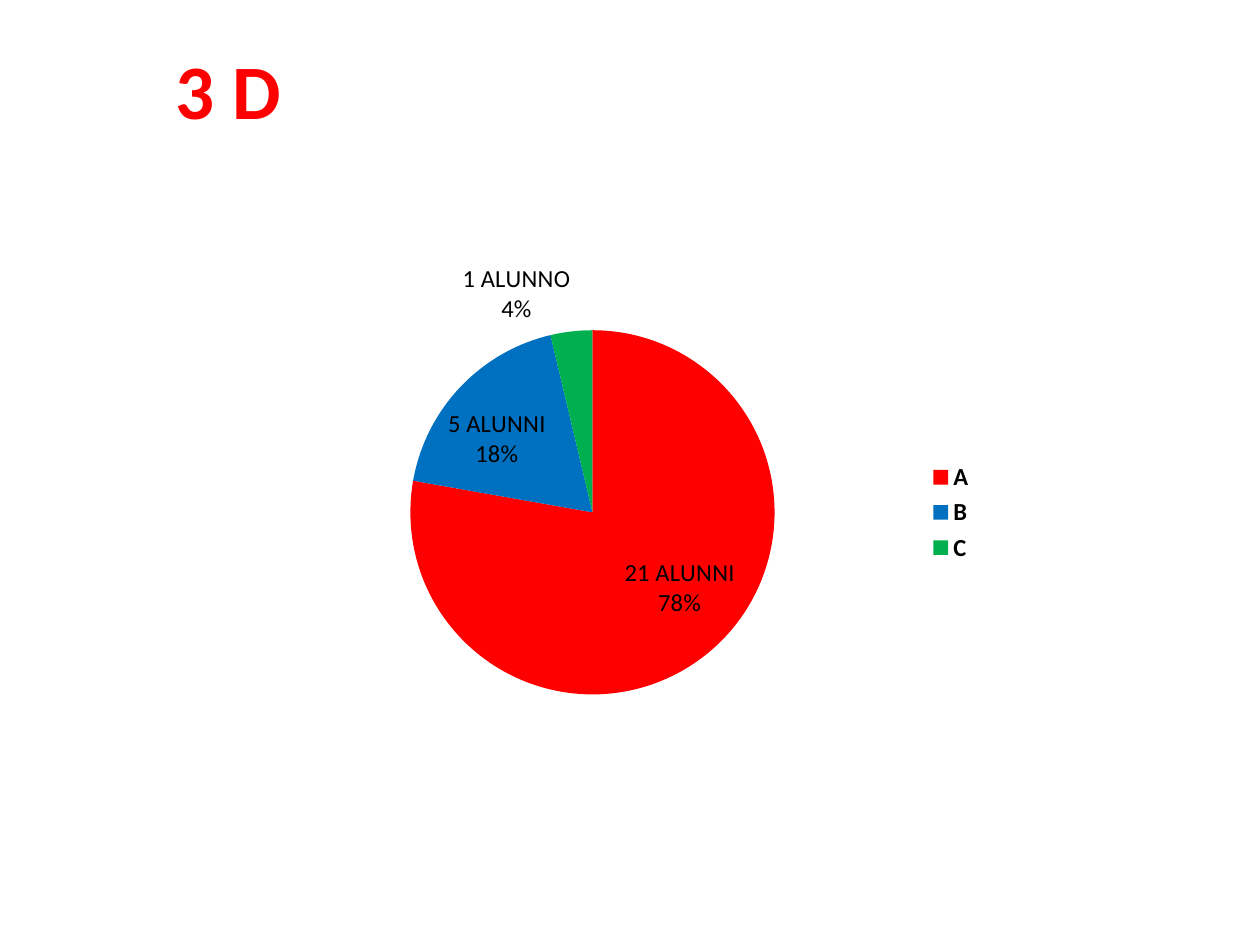
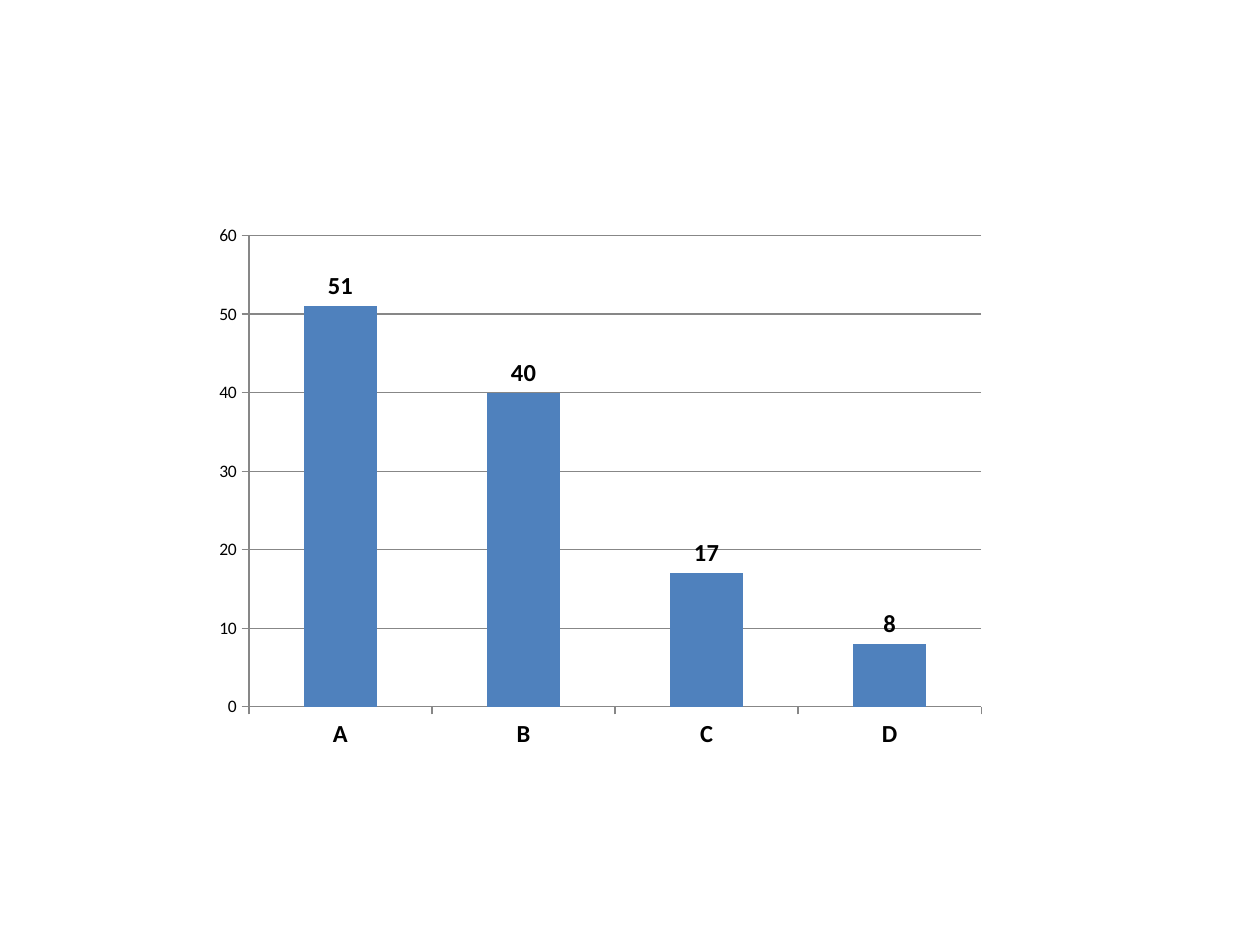
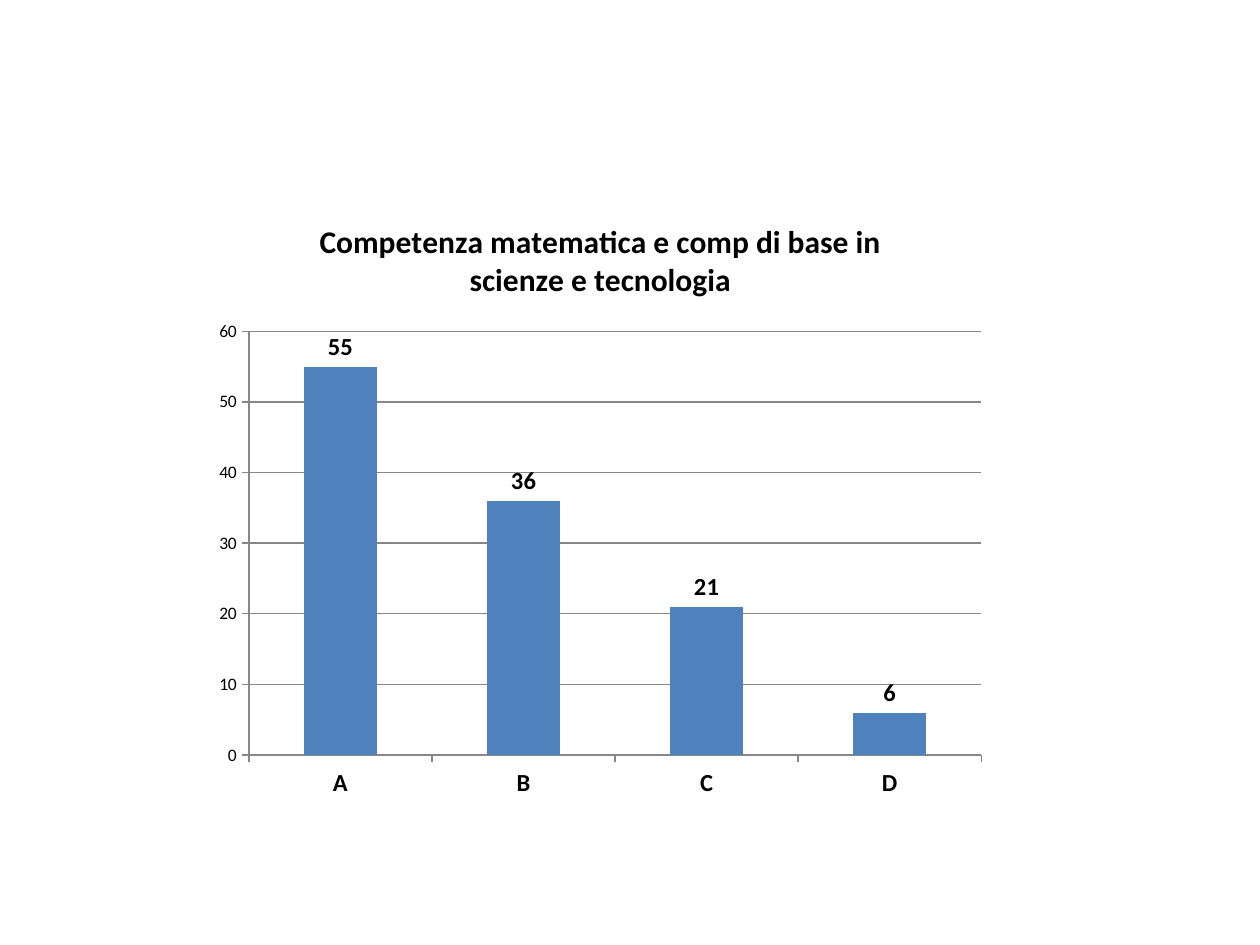
from dataclasses import dataclass

from pptx import Presentation
from pptx.chart import data as chart_data
from pptx.chart.chart import Chart
from pptx.dml.color import RGBColor
from pptx.enum import chart as kinds, text
from pptx.oxml import parse_xml
from pptx.oxml.ns import nsdecls
from pptx.slide import Slide
from pptx.util import Cm, Pt

RED = RGBColor(0xFF, 0x00, 0x00)
BLUE = RGBColor(0x00, 0x70, 0xC0)
GREEN = RGBColor(0x00, 0xB0, 0x50)
BAR_BLUE = RGBColor(0x4F, 0x81, 0xBD)
GREY = RGBColor(0x87, 0x87, 0x87)
BLACK = RGBColor(0x00, 0x00, 0x00)

FONT = "Calibri"
SMALL, LARGE = Pt(10), Pt(14)
TITLE_ONLY, BLANK = 5, 6


@dataclass(frozen=True)
class Frame:
    """Place of an object on the slide, in centimetres."""
    left: float
    top: float
    width: float
    height: float

    def lengths(self) -> tuple[Cm, Cm, Cm, Cm]:
        return Cm(self.left), Cm(self.top), Cm(self.width), Cm(self.height)


@dataclass(frozen=True)
class Slice:
    grade: str
    pupils: int
    label: str
    color: RGBColor


@dataclass(frozen=True)
class GradeBars:
    frame: Frame
    counts: tuple[int, ...]
    title: str = ""


CLASS_SLICES = (
    Slice("A", 21, "21 ALUNNI\n78%", RED),
    Slice("B", 5, "5 ALUNNI\n18%", BLUE),
    Slice("C", 1, "1 ALUNNO\n4%", GREEN),
)
BAR_CHARTS = (
    GradeBars(Frame(4.1, 4.33, 16, 11), (51, 40, 17, 8)),
    GradeBars(Frame(4.1, 3.93, 16, 12.4), (55, 36, 21, 6),
              "Competenza matematica e comp di base in scienze e tecnologia"),
)


def add_chart(page: Slide, kind: kinds.XL_CHART_TYPE, frame: Frame,
              grades: list[str], counts: list[int], name: str) -> Chart:
    """Add a one-series chart with the shared text style."""
    table = chart_data.CategoryChartData()
    table.categories = grades
    table.add_series(name, counts)
    chart = page.shapes.add_chart(kind, *frame.lengths(), table).chart
    chart.font.name = FONT
    chart.font.size = SMALL
    chart.font.color.rgb = BLACK
    chart.has_title = False
    chart.has_legend = False
    return chart


def place_plot(chart: Chart, x: float, y: float, w: float, h: float) -> None:
    """Fix the inner plot area, as fractions of the chart."""
    area = chart.element.xpath("c:chart/c:plotArea")[0]
    for layout in area.xpath("c:layout"):
        area.remove(layout)
    sizes = "".join(f'<c:{key} val="{value}"/>'
                    for key, value in zip("xywh", (x, y, w, h)))
    area.insert(0, parse_xml(
        f'<c:layout {nsdecls("c")}><c:manualLayout>'
        '<c:layoutTarget val="inner"/><c:xMode val="edge"/><c:yMode val="edge"/>'
        f'{sizes}</c:manualLayout></c:layout>'))


def add_class_title(page: Slide, words: str) -> None:
    box = page.shapes.title
    box.left, box.top, box.width, box.height = Frame(2.1, 0.72, 5, 2.14).lengths()
    frame = box.text_frame
    frame.text = words
    frame.word_wrap = True
    frame.auto_size = text.MSO_AUTO_SIZE.SHAPE_TO_FIT_TEXT
    para = frame.paragraphs[0]
    para.alignment = text.PP_ALIGN.CENTER
    para.font.name = FONT
    para.font.size = Pt(44)
    para.font.bold = True
    para.font.color.rgb = RED


def add_class_pie(page: Slide, slices: tuple[Slice, ...]) -> None:
    chart = add_chart(page, kinds.XL_CHART_TYPE.PIE, Frame(4.6, 4.93, 15.3, 10.8),
                      [part.grade for part in slices],
                      [part.pupils for part in slices], "Series 1")
    place_plot(chart, 0.24, 0.16, 0.48, 0.68)
    chart.has_legend = True
    chart.legend.position = kinds.XL_LEGEND_POSITION.RIGHT
    chart.legend.include_in_layout = False
    chart.legend.font.size = LARGE
    chart.legend.font.bold = True

    series = chart.plots[0].series[0]
    for index, part in enumerate(slices):
        point = series.points[index]
        point.format.fill.solid()
        point.format.fill.fore_color.rgb = part.color
        label = point.data_label
        label.text_frame.text = part.label
        label.position = kinds.XL_LABEL_POSITION.BEST_FIT
        for para in label.text_frame.paragraphs:
            for span in para.runs:
                span.font.name = FONT
                span.font.size = LARGE
                span.font.bold = False
                span.font.color.rgb = BLACK

    labels = series.data_labels
    labels.show_value = True
    labels.show_percentage = True
    labels.position = kinds.XL_LABEL_POSITION.BEST_FIT
    labels.font.size = LARGE
    labels.font.bold = True
    for flag in chart.element.xpath(".//c:dLbl/c:showPercent"):
        flag.set("val", "1")


def add_grade_bars(page: Slide, bars: GradeBars) -> None:
    chart = add_chart(page, kinds.XL_CHART_TYPE.COLUMN_CLUSTERED, bars.frame,
                      list("ABCD"), list(bars.counts), bars.title or "Series 1")
    if bars.title:
        chart.has_title = True
        chart.chart_title.include_in_layout = False
        chart.chart_title.text_frame.text = bars.title
        span = chart.chart_title.text_frame.paragraphs[0].runs[0]
        span.font.name = FONT
        span.font.size = Pt(18)
        span.font.bold = True
        span.font.color.rgb = BLACK

    plot = chart.plots[0]
    plot.gap_width = 150
    plot.vary_by_categories = False
    series = plot.series[0]
    series.format.fill.solid()
    series.format.fill.fore_color.rgb = BAR_BLUE
    labels = series.data_labels
    labels.show_value = True
    labels.position = kinds.XL_LABEL_POSITION.OUTSIDE_END

    counts, grades = chart.value_axis, chart.category_axis
    counts.minimum_scale, counts.maximum_scale, counts.major_unit = 0, 60, 10
    counts.has_major_gridlines = True
    for axis in (counts, grades):
        axis.major_tick_mark = kinds.XL_TICK_MARK.OUTSIDE
        axis.format.line.color.rgb = GREY
    counts.major_gridlines.format.line.color.rgb = GREY
    for font in (labels.font, grades.tick_labels.font):
        font.size = LARGE
        font.bold = True


def main() -> None:
    deck = Presentation()
    deck.slide_width, deck.slide_height = Cm(25.4), Cm(19.05)
    page = deck.slides.add_slide(deck.slide_layouts[TITLE_ONLY])
    add_class_title(page, "3 D")
    add_class_pie(page, CLASS_SLICES)
    for bars in BAR_CHARTS:
        add_grade_bars(deck.slides.add_slide(deck.slide_layouts[BLANK]), bars)
    deck.save("out.pptx")


if __name__ == "__main__":
    main()
